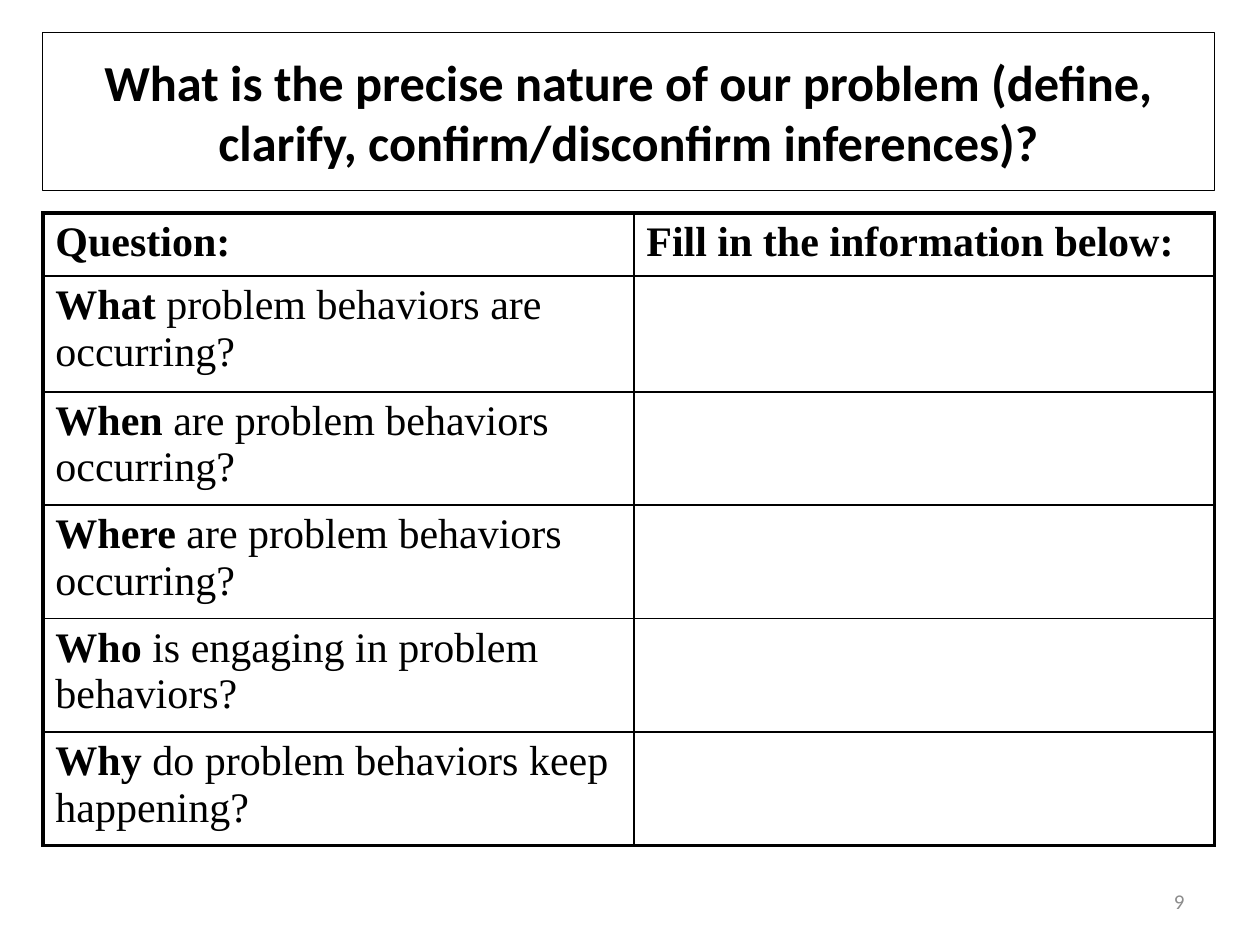
"""Build a problem-definition worksheet slide with a title and a question table."""
from dataclasses import dataclass

from lxml import etree
from pptx import Presentation
from pptx.dml.color import RGBColor
from pptx.enum import shapes, text
from pptx.oxml import ns
from pptx.util import Pt


@dataclass(frozen=True)
class Theme:
    ink: str = "000000"
    muted: str = "8C8C8C"
    title_font: str = "Calibri"
    table_font: str = "Times New Roman"
    title_size: float = 28.8
    table_size: float = 24
    number_size: float = 12
    outer_line: float = 2.25
    inner_line: float = 1


THEME = Theme()
LEFT, WIDTH = 24.5, 669.6
COLUMNS = (337.7, 331.9)
ROWS = (36, 66.2, 64.8, 64.8, 64.8, 64.8)
HEADERS = ("Question:", "Fill in the information below:")
QUESTIONS = (
    ("What", " problem behaviors are occurring?"),
    ("When", " are problem behaviors occurring?"),
    ("Where", " are problem behaviors occurring?"),
    ("Who", " is engaging in problem behaviors?"),
    ("Why", " do problem behaviors keep happening?"),
)


def style_font(font, name, size, color):
    font.name = name
    font.size = Pt(size)
    font.color.rgb = RGBColor.from_string(color)


def write_line(tf, words, align, name, size, color, bold=False):
    tf.word_wrap = True
    tf.vertical_anchor = text.MSO_ANCHOR.MIDDLE
    p = tf.paragraphs[0]
    p.text = words
    p.alignment = align
    p.font.bold = bold
    style_font(p.font, name, size, color)


def add_title(s, words):
    sp = s.shapes.add_shape(shapes.MSO_SHAPE.RECTANGLE,
                            Pt(LEFT), Pt(18.7), Pt(WIDTH), Pt(90))
    sp.shadow.inherit = False
    sp.fill.background()
    sp.line.color.rgb = RGBColor.from_string(THEME.ink)
    sp.line.width = Pt(0.75)
    write_line(sp.text_frame, words, text.PP_ALIGN.CENTER,
               THEME.title_font, THEME.title_size, THEME.ink, bold=True)


def add_page_number(s, number):
    sp = s.shapes.add_textbox(Pt(516.2), Pt(500.4), Pt(167.8), Pt(28.8))
    write_line(sp.text_frame, number, text.PP_ALIGN.RIGHT,
               THEME.title_font, THEME.number_size, THEME.muted)


def set_borders(cell, outer_edges):
    tc_pr = cell._tc.get_or_add_tcPr()
    for side, is_outer in zip("LRTB", outer_edges):
        width = THEME.outer_line if is_outer else THEME.inner_line
        ln = etree.SubElement(tc_pr, ns.qn(f"a:ln{side}"), w=str(Pt(width)))
        fill = etree.SubElement(ln, ns.qn("a:solidFill"))
        etree.SubElement(fill, ns.qn("a:srgbClr"), val=THEME.ink)


def fill_cell(cell, parts):
    p = cell.text_frame.paragraphs[0]
    style_font(p.font, THEME.table_font, THEME.table_size, THEME.ink)
    for i, words in enumerate(parts):
        r = p.add_run()
        r.text = words
        r.font.bold = i == 0
        style_font(r.font, THEME.table_font, THEME.table_size, THEME.ink)


def add_question_table(s):
    table = s.shapes.add_table(len(ROWS), len(COLUMNS), Pt(LEFT), Pt(121.7),
                               Pt(WIDTH), Pt(sum(ROWS))).table
    table.first_row = table.horz_banding = False
    for column, width in zip(table.columns, COLUMNS):
        column.width = Pt(width)
    for row, height in zip(table.rows, ROWS):
        row.height = Pt(height)
    content = [[(h,) for h in HEADERS]] + [[q, ()] for q in QUESTIONS]
    last_row, last_col = len(ROWS) - 1, len(COLUMNS) - 1
    for i, row in enumerate(content):
        for j, parts in enumerate(row):
            cell = table.cell(i, j)
            set_borders(cell, (j == 0, j == last_col, i == 0, i == last_row))
            cell.fill.background()
            fill_cell(cell, parts)


def main():
    prs = Presentation()
    prs.slide_width, prs.slide_height = Pt(720), Pt(540)
    s = prs.slides.add_slide(prs.slide_layouts[6])
    add_title(s, "What is the precise nature of our problem "
                 "(define, clarify, confirm/disconfirm inferences)?")
    add_question_table(s)
    add_page_number(s, "9")
    prs.save("out.pptx")


if __name__ == "__main__":
    main()
